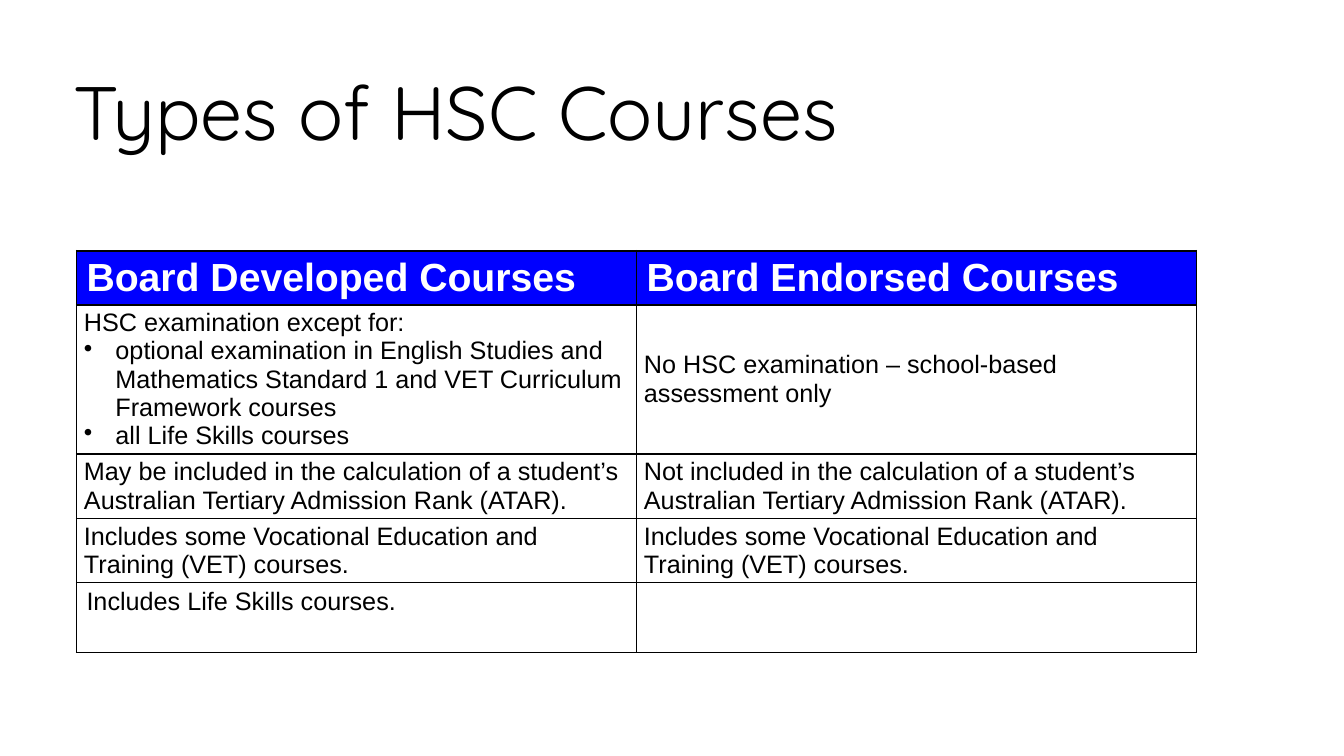
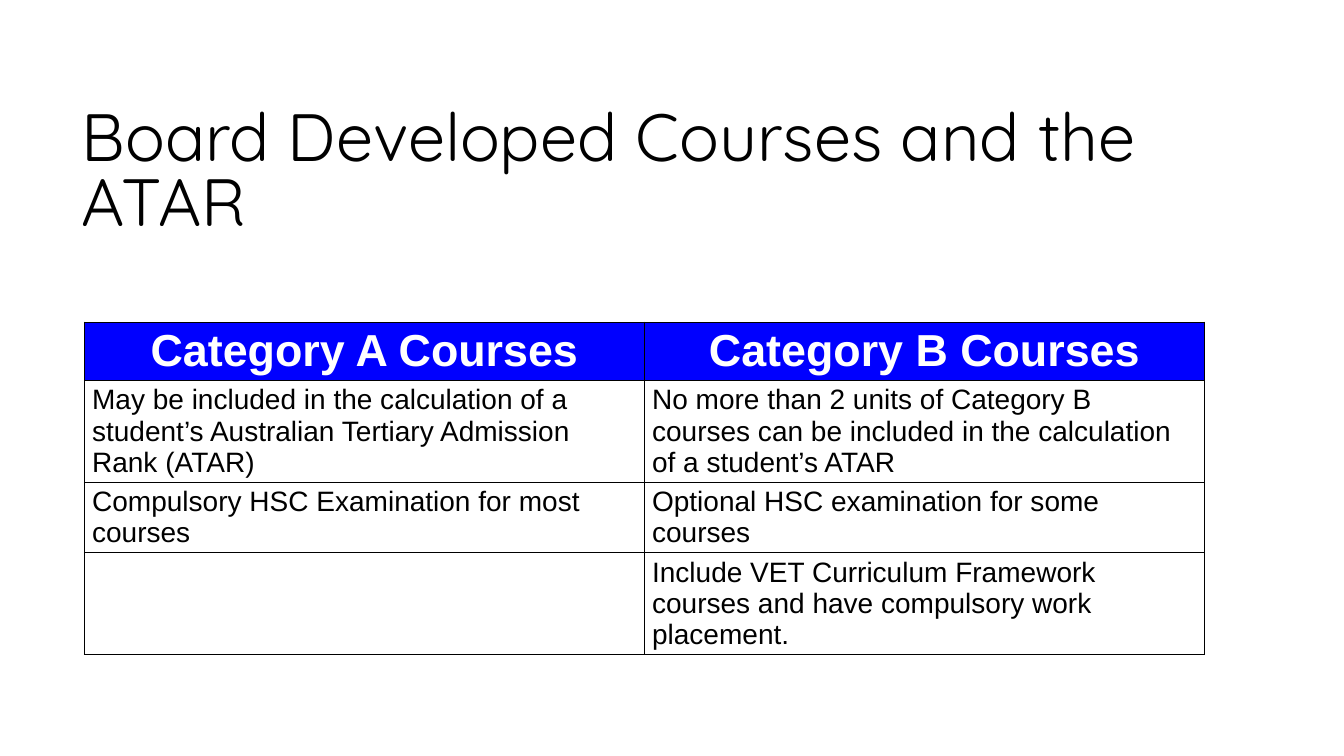
import pptx
import pptx.util
import pptx.dml.color
import pptx.enum.text
import pptx.oxml
import pptx.oxml.ns

Pt = pptx.util.Pt
Align = pptx.enum.text.PP_ALIGN
Anchor = pptx.enum.text.MSO_ANCHOR

BLUE, WHITE, BLACK = "0000FF", "FFFFFF", "000000"
COL = 400
VET = "Includes some Vocational Education and Training (VET) courses."

SLIDES = [
    dict(
        title="Types of HSC Courses",
        box=(43.2, 40, 800, 76.6), size=54, lead=0.85,
        at=(54.6, 179.2), rule=1.5, sizes=(28, 18), align=Align.LEFT,
        heights=[38.5, 105.8, 45.7, 45.7, 50], wide=(0, 4),
        rows=[
            ["Board Developed Courses", "Board Endorsed Courses"],
            ["HSC examination except for:\n"
             "• optional examination in English Studies and Mathematics "
             "Standard 1 and VET Curriculum Framework courses\n"
             "• all Life Skills courses",
             "No HSC examination – school-based assessment only"],
            ["May be included in the calculation of a student’s "
             "Australian Tertiary Admission Rank (ATAR).",
             "Not included in the calculation of a student’s "
             "Australian Tertiary Admission Rank (ATAR)."],
            [VET, VET],
            ["Includes Life Skills courses.", ""],
        ],
    ),
    dict(
        title="Board Developed Courses and the ATAR",
        box=(49, 64, 800, 111.7), size=47.7, lead=0.81,
        at=(60.4, 230.2), rule=1, sizes=(32, 20), align=Align.CENTER,
        heights=[41.5, 72.3, 50, 72.3], wide=(),
        rows=[
            ["Category A Courses", "Category B Courses"],
            ["May be included in the calculation of a student’s "
             "Australian Tertiary Admission Rank (ATAR)",
             "No more than 2 units of Category B courses can be included "
             "in the calculation of a student’s ATAR"],
            ["Compulsory HSC Examination for most courses",
             "Optional HSC examination for some courses"],
            ["", "Include VET Curriculum Framework courses and have "
             "compulsory work placement."],
        ],
    ),
]


def rgb(code):
    return pptx.dml.color.RGBColor.from_string(code)


def style(par, name, size, color, bold=False):
    for run in par.runs:
        font = run.font
        font.name, font.size, font.bold = name, Pt(size), bold
        font.color.rgb = rgb(color)


def border(cell, side, width):
    line = pptx.oxml.parse_xml(
        f'<a:ln{side} {pptx.oxml.ns.nsdecls("a")} w="{Pt(width)}">'
        f'<a:solidFill><a:srgbClr val="{BLACK}"/></a:solidFill></a:ln{side}>')
    cell._tc.get_or_add_tcPr().append(line)


def bullet(par):
    props = par._p.get_or_add_pPr()
    props.set("marL", str(Pt(22.5)))
    props.set("indent", str(-Pt(22.5)))
    props.append(pptx.oxml.parse_xml(
        f'<a:buChar {pptx.oxml.ns.nsdecls("a")} char="•"/>'))


def add_title(slide, data):
    shape = slide.shapes.title
    shape.left, shape.top, shape.width, shape.height = map(Pt, data["box"])
    frame = shape.text_frame
    frame.text = data["title"]
    frame.word_wrap = True
    frame.auto_size = pptx.enum.text.MSO_AUTO_SIZE.NONE
    frame.vertical_anchor = Anchor.BOTTOM
    frame.margin_left = frame.margin_right = Pt(9.4)
    frame.margin_top = frame.margin_bottom = Pt(5)
    par = frame.paragraphs[0]
    par.alignment = Align.LEFT
    par.line_spacing = data["lead"]
    style(par, "Quicksand", data["size"], BLACK)


def fill_cell(cell, text, data, row, col):
    head = row == 0
    rule = data["rule"]
    border(cell, "L", 1)
    border(cell, "R", rule if col == 1 else 1)
    border(cell, "T", rule if row <= 1 else 1)
    border(cell, "B", rule if head else 1)
    cell.fill.solid()
    cell.fill.fore_color.rgb = rgb(BLUE if head else WHITE)
    wide = row in data["wide"]
    cell.margin_left = cell.margin_right = Pt(7.2 if wide else 5.4)
    cell.margin_top = cell.margin_bottom = Pt(3.6 if wide else 2.88)
    cell.vertical_anchor = Anchor.TOP if wide else Anchor.MIDDLE
    cell.text_frame.text = text
    for par in cell.text_frame.paragraphs:
        if par.text.startswith("• "):
            par.text = par.text[2:]
            bullet(par)
        par.alignment = data["align"] if head else Align.LEFT
        style(par, "Arial", data["sizes"][0 if head else 1],
              WHITE if head else BLACK, head)


def add_grid(slide, data):
    rows, tall = data["rows"], data["heights"]
    left, top = data["at"]
    table = slide.shapes.add_table(
        len(rows), 2, Pt(left), Pt(top), Pt(2 * COL), Pt(sum(tall))).table
    table.first_row = table.horz_banding = False
    for col in table.columns:
        col.width = Pt(COL)
    for r, texts in enumerate(rows):
        table.rows[r].height = Pt(tall[r])
        for c, text in enumerate(texts):
            fill_cell(table.cell(r, c), text, data, r, c)


def main():
    deck = pptx.Presentation()
    deck.slide_width, deck.slide_height = Pt(960), Pt(540)
    for data in SLIDES:
        slide = deck.slides.add_slide(deck.slide_layouts[5])
        add_title(slide, data)
        add_grid(slide, data)
    deck.save("out.pptx")


if __name__ == "__main__":
    main()
